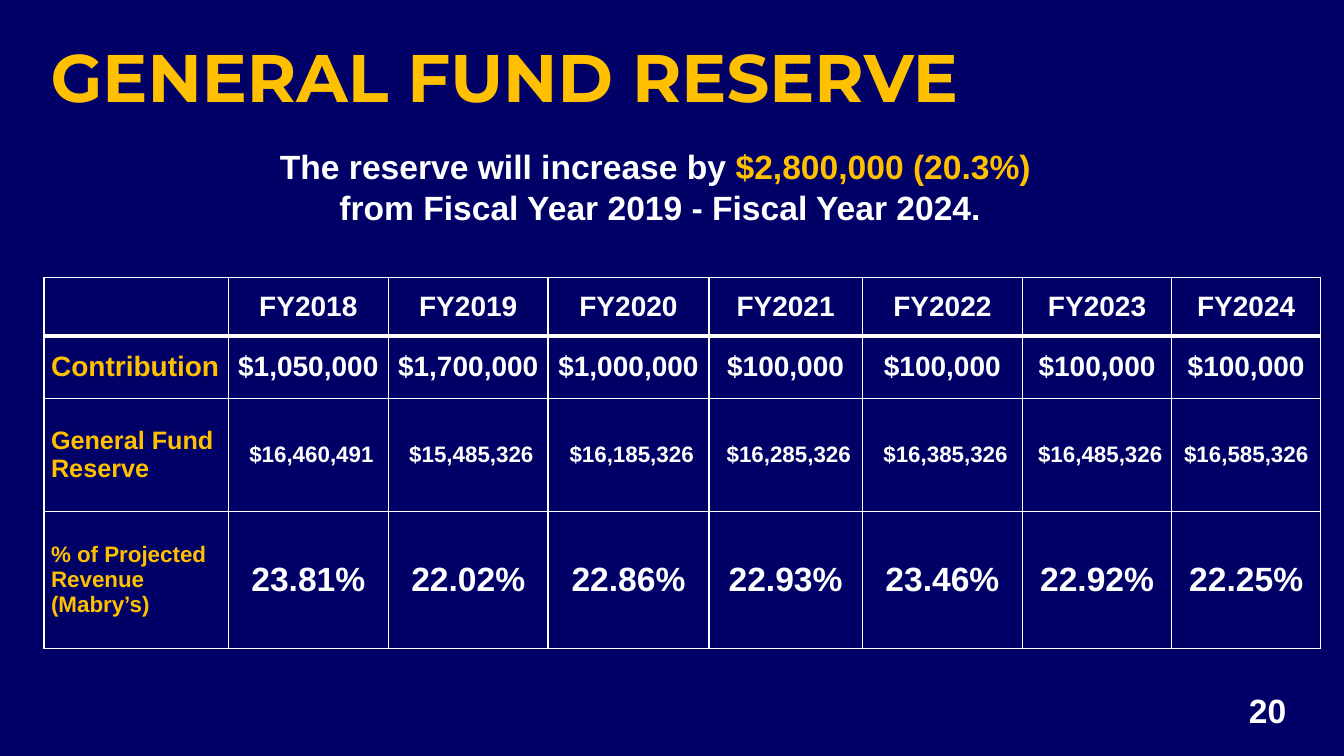
from lxml.etree import SubElement
from pptx import Presentation
from pptx.dml.color import RGBColor
from pptx.enum.text import MSO_ANCHOR as Anchor, MSO_AUTO_SIZE as AutoSize, PP_ALIGN as Align
from pptx.oxml.ns import qn
from pptx.util import Pt

COLORS = {"navy": "000066", "gold": "FFC000", "white": "FFFFFF"}

COLUMN_WIDTHS = [131.5, 114.5, 114, 115, 109.5, 114.5, 106.5, 106.5]
ROW_HEIGHTS = [42, 44.5, 81, 97.5]
# Each row: label size, value size, cell texts
ROWS = [
    (20, 20, ["", *(f"FY{year}" for year in range(2018, 2025))]),
    (20, 20, ["Contribution", "$1,050,000", "$1,700,000", "$1,000,000",
              "$100,000", "$100,000", "$100,000", "$100,000"]),
    (18, 16, ["General Fund Reserve", " $16,460,491", " $15,485,326", " $16,185,326",
              " $16,285,326", " $16,385,326", " $16,485,326", "$16,585,326"]),
    (16, 24, ["% of Projected Revenue (Mabry’s)", "23.81%", "22.02%", "22.86%",
              "22.93%", "23.46%", "22.92%", "22.25%"]),
]


class SlideBuilder:
    """Holds the slide and its style."""

    body_font = "Arial"
    title_font = "Montserrat"

    def __init__(self, presentation):
        self.slide = presentation.slides.add_slide(presentation.slide_layouts[5])
        background = self.slide.background.fill
        background.solid()
        background.fore_color.rgb = self.color("navy")

    def color(self, name):
        return RGBColor.from_string(COLORS[name])

    def format_run(self, run, size, color, font=None):
        run.font.name = font or self.body_font
        run.font.size = Pt(size)
        run.font.bold = True
        run.font.color.rgb = self.color(color)

    def title(self, text, left, top, width, height):
        shape = self.slide.shapes.title
        shape.left, shape.top, shape.width, shape.height = map(Pt, (left, top, width, height))
        frame = shape.text_frame
        frame.text = text
        frame.auto_size = AutoSize.NONE
        frame.vertical_anchor = Anchor.TOP
        paragraph = frame.paragraphs[0]
        paragraph.alignment = Align.LEFT
        self.format_run(paragraph.runs[0], 48, "gold", self.title_font)

    def text(self, lines, left, top, width, height, size):
        """Centred text; each line is a list of (text, color) parts."""
        shape = self.slide.shapes.add_textbox(*map(Pt, (left, top, width, height)))
        frame = shape.text_frame
        frame.word_wrap = True
        paragraph = frame.paragraphs[0]
        paragraph.alignment = Align.CENTER
        for number, parts in enumerate(lines):
            if number:
                paragraph.add_line_break()
            for text, color in parts:
                run = paragraph.add_run()
                run.text = text
                self.format_run(run, size, color)

    def borders(self, cell, top, bottom):
        properties = cell._tc.get_or_add_tcPr()
        for side, width in (("L", 1), ("R", 1), ("T", top), ("B", bottom)):
            line = SubElement(properties, qn(f"a:ln{side}"), w=str(Pt(width)))
            fill = SubElement(line, qn("a:solidFill"))
            SubElement(fill, qn("a:srgbClr"), val=COLORS["white"])

    def cell(self, cell, text, size, color, alignment):
        cell.fill.background()
        cell.vertical_anchor = Anchor.MIDDLE
        cell.margin_left = cell.margin_right = Pt(5)
        cell.margin_top = cell.margin_bottom = 0
        cell.text_frame.text = text
        paragraph = cell.text_frame.paragraphs[0]
        paragraph.alignment = alignment
        for run in paragraph.runs:
            self.format_run(run, size, color)

    def table(self, rows, left, top, widths, heights):
        frame = self.slide.shapes.add_table(
            len(rows), len(widths), Pt(left), Pt(top), Pt(sum(widths)), Pt(sum(heights)))
        table = frame.table
        table.first_row = table.horz_banding = False
        for column, width in zip(table.columns, widths):
            column.width = Pt(width)
        for row, height in zip(table.rows, heights):
            row.height = Pt(height)
        for row_index, (label_size, value_size, texts) in enumerate(rows):
            for column_index, text in enumerate(texts):
                cell = table.cell(row_index, column_index)
                # Thick rule between the header and the body
                self.borders(cell, top=3 if row_index == 1 else 1,
                             bottom=3 if row_index == 0 else 1)
                if column_index == 0:
                    self.cell(cell, text, label_size, "gold", Align.LEFT)
                else:
                    self.cell(cell, text, value_size, "white", Align.CENTER)


def main():
    presentation = Presentation()
    presentation.slide_width, presentation.slide_height = Pt(960), Pt(540)
    builder = SlideBuilder(presentation)

    # Heading and summary
    builder.title("GENERAL FUND RESERVE", 29, 21.5, 864, 90)
    builder.text([
        [("The reserve will increase by ", "white"), ("$2,800,000 (20.3%) ", "gold")],
        [("from Fiscal Year 2019 - Fiscal Year 2024.", "white")],
    ], 48, 101, 847, 65.5, size=24)

    # Reserve by fiscal year
    builder.table(ROWS, 31.5, 198, COLUMN_WIDTHS, ROW_HEIGHTS)

    # Page number
    builder.text([[("20", "white")]], 869.5, 489, 72, 36, size=24)

    presentation.save("out.pptx")


if __name__ == "__main__":
    main()
